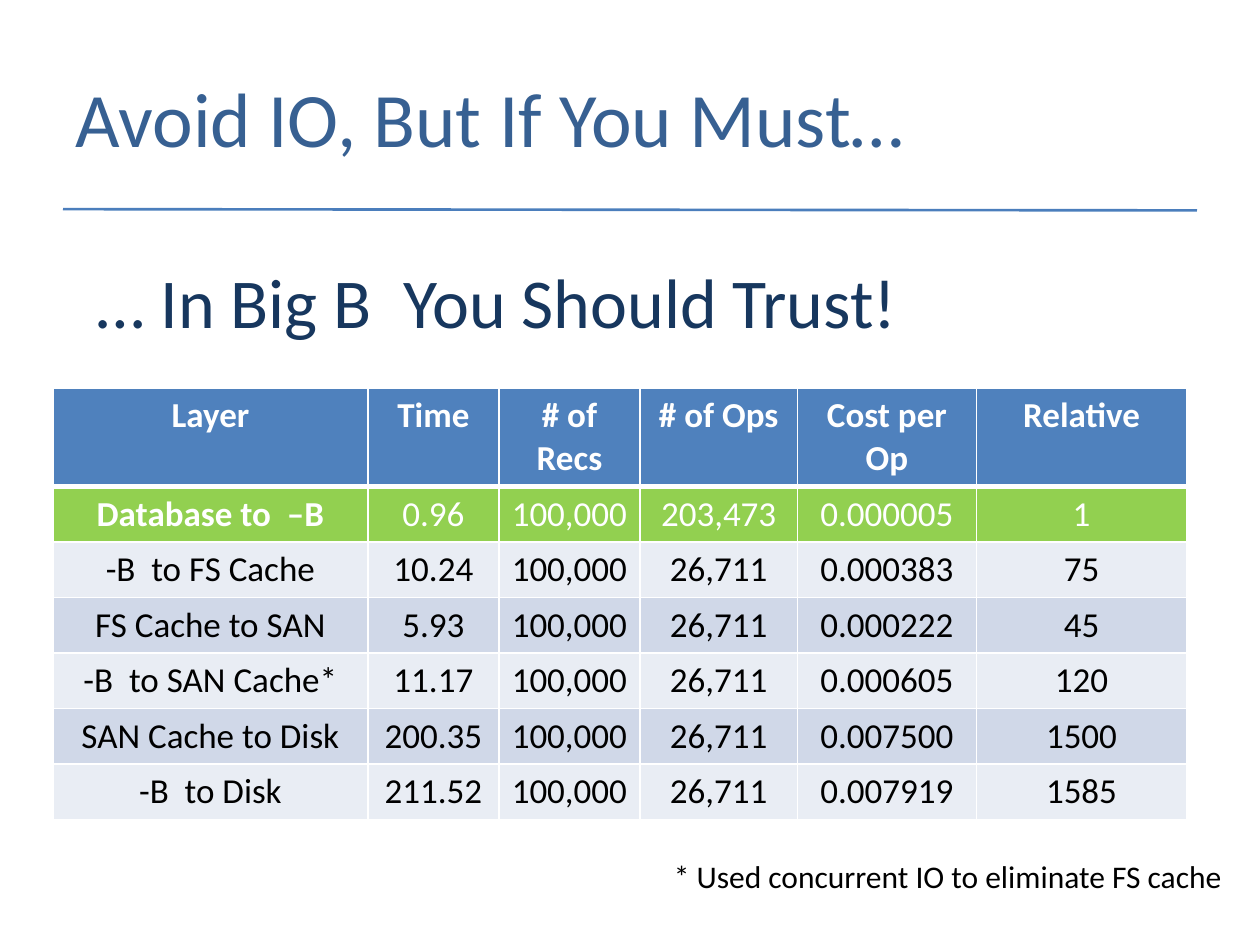
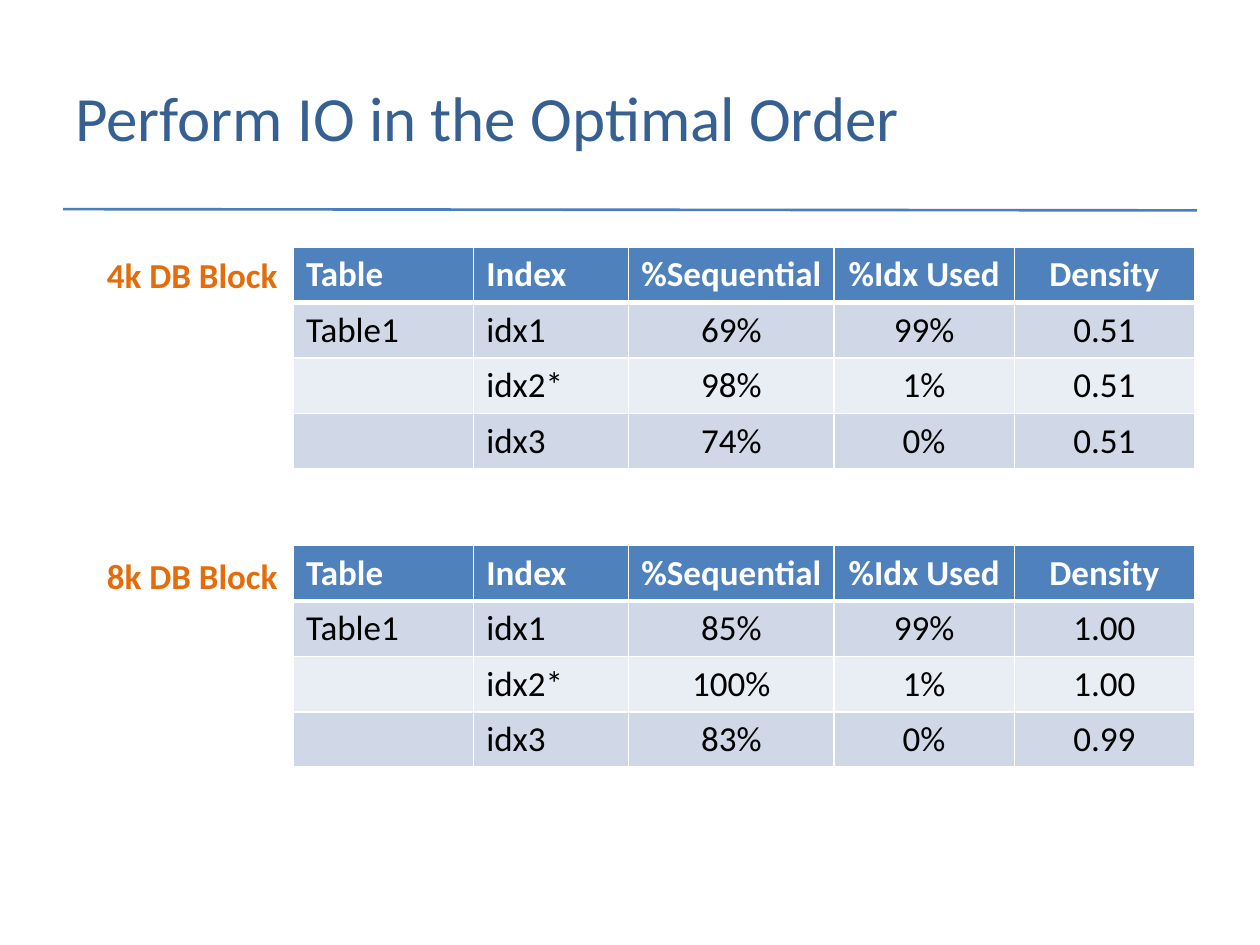
from pptx import Presentation
from pptx.dml.color import RGBColor
from pptx.enum.shapes import MSO_CONNECTOR
from pptx.enum.text import MSO_ANCHOR, MSO_AUTO_SIZE, PP_ALIGN
from pptx.oxml import parse_xml
from pptx.oxml.ns import nsdecls
from pptx.util import Inches, Pt

WHITE = RGBColor(0xFF, 0xFF, 0xFF)
BLACK = RGBColor(0x00, 0x00, 0x00)
TITLE_BLUE = RGBColor(0x37, 0x60, 0x92)
RULE_BLUE = RGBColor(0x4B, 0x7E, 0xBC)
NAVY = RGBColor(0x17, 0x37, 0x5E)
HEADER_BLUE = RGBColor(0x4F, 0x81, 0xBD)
BAND_DARK = RGBColor(0xD0, 0xD8, 0xE8)
BAND_LIGHT = RGBColor(0xE9, 0xED, 0xF4)
GREEN = RGBColor(0x92, 0xD0, 0x50)
ORANGE = RGBColor(0xE4, 0x6C, 0x0A)

FONT = "Calibri"
TABLE_SIZE = 20
LINE_HEIGHT = 0.44
LEFT, CENTER = PP_ALIGN.LEFT, PP_ALIGN.CENTER

LAYER_WIDTHS = [2.5, 1.04, 1.12, 1.25, 1.42, 1.67]
LAYER_ROWS = [
    ["Layer", "Time", "# of Recs", "# of Ops", "Cost per Op", "Relative"],
    ["Database to  –B", "0.96", "100,000", "203,473", "0.000005", "1"],
    ["-B  to FS Cache", "10.24", "100,000", "26,711", "0.000383", "75"],
    ["FS Cache to SAN", "5.93", "100,000", "26,711", "0.000222", "45"],
    ["-B  to SAN Cache*", "11.17", "100,000", "26,711", "0.000605", "120"],
    ["SAN Cache to Disk", "200.35", "100,000", "26,711", "0.007500", "1500"],
    ["-B  to Disk", "211.52", "100,000", "26,711", "0.007919", "1585"],
]

INDEX_WIDTHS = [1.43, 1.23, 1.63, 1.43, 1.43]
INDEX_HEADER = ["Table", "Index", "%Sequential", "%Idx Used", "Density"]
INDEX_ALIGNS = [LEFT, LEFT, CENTER, CENTER, CENTER]
BLOCK_SIZES = [
    ("4k DB Block", 1.96, 1.96, [
        ["Table1", "idx1", "69%", "99%", "0.51"],
        ["", "idx2*", "98%", "1%", "0.51"],
        ["", "idx3", "74%", "0%", "0.51"],
    ]),
    ("8k DB Block", 4.35, 4.33, [
        ["Table1", "idx1", "85%", "99%", "1.00"],
        ["", "idx2*", "100%", "1%", "1.00"],
        ["", "idx3", "83%", "0%", "0.99"],
    ]),
]


class SlideBuilder:
    def __init__(self):
        self.deck = Presentation()
        self.deck.slide_width = Inches(10)
        self.deck.slide_height = Inches(7.5)
        self.page = None

    def new_page(self, title, size):
        """Add a page with its title and the rule below it."""
        self.page = self.deck.slides.add_slide(self.deck.slide_layouts[6])
        self.rule((0.5, 1.66), (9.5, 1.67))
        frame = self.text(title, (0.5, 0.3, 7.83, 1.25), size, TITLE_BLUE)
        for name, value in {"auto_size": MSO_AUTO_SIZE.NONE, "word_wrap": True,
                            "vertical_anchor": MSO_ANCHOR.MIDDLE}.items():
            setattr(frame, name, value)

    def rule(self, start, end):
        points = [Inches(value) for value in start + end]
        line = self.page.shapes.add_connector(MSO_CONNECTOR.STRAIGHT, *points)
        line.line.color.rgb = RULE_BLUE
        line.line.width = Pt(1.5)
        line._element.spPr.append(parse_xml(f"<a:effectLst {nsdecls('a')}/>"))

    def text(self, words, place, size, color, bold=False):
        """Add one unwrapped line of text and return its frame."""
        box = self.page.shapes.add_textbox(*map(Inches, place))
        frame = box.text_frame
        frame.word_wrap = False
        frame.auto_size = MSO_AUTO_SIZE.SHAPE_TO_FIT_TEXT
        self.add_span(frame.paragraphs[0], words, size, color, bold)
        return frame

    def add_span(self, para, words, size, color, bold):
        span = para.add_run()
        span.text = words
        for name, value in {"name": FONT, "size": Pt(size), "bold": bold}.items():
            setattr(span.font, name, value)
        span.font.color.rgb = color

    def table(self, rows, widths, left, top, aligns, header_height=LINE_HEIGHT,
              highlight=None):
        """Add a banded table; the highlight row is green with a bold first cell."""
        height = header_height + LINE_HEIGHT * (len(rows) - 1)
        frame = self.page.shapes.add_table(
            len(rows), len(widths),
            *map(Inches, (left, top, sum(widths), height)))
        grid = frame.table
        for column, width in zip(grid.columns, widths):
            column.width = Inches(width)
        for r, values in enumerate(rows):
            grid.rows[r].height = Inches(LINE_HEIGHT if r else header_height)
            if r == 0:
                fill, color = HEADER_BLUE, WHITE
            elif r == highlight:
                fill, color = GREEN, WHITE
            else:
                fill, color = (BAND_DARK if r % 2 else BAND_LIGHT), BLACK
            for c, (words, align) in enumerate(zip(values, aligns)):
                cell = grid.cell(r, c)
                self.borders(cell, top=3 if r == 1 else 1, bottom=1 if r else 3)
                cell.fill.solid()
                cell.fill.fore_color.rgb = fill
                para = cell.text_frame.paragraphs[0]
                para.alignment = align
                if words:
                    bold = r == 0 or (r == highlight and c == 0)
                    self.add_span(para, words, TABLE_SIZE, color, bold)

    def borders(self, cell, top, bottom):
        properties = cell._tc.get_or_add_tcPr()
        for side, width in {"L": 1, "R": 1, "T": top, "B": bottom}.items():
            properties.append(parse_xml(
                f'<a:ln{side} {nsdecls("a")} w="{int(Pt(width))}"><a:solidFill>'
                f'<a:srgbClr val="{WHITE}"/></a:solidFill></a:ln{side}>'))


def build_layer_costs(builder):
    builder.new_page("Avoid IO, But If You Must…", 44)
    builder.table(LAYER_ROWS, LAYER_WIDTHS, 0.42, 3.08,
                  [CENTER] * len(LAYER_WIDTHS), header_height=0.78, highlight=1)
    builder.text("* Used concurrent IO to eliminate FS cache",
                 (5.25, 6.75, 4.6, 0.4), 18, BLACK)
    builder.text("… In Big B  You Should Trust!", (0.67, 2, 6.61, 0.77), 40, NAVY)


def build_index_order(builder):
    builder.new_page("Perform IO in the Optimal Order", 36)
    for label, label_top, table_top, rows in BLOCK_SIZES:
        builder.table([INDEX_HEADER] + rows, INDEX_WIDTHS, 2.33, table_top,
                      INDEX_ALIGNS)
        builder.text(label, (0.75, label_top, 1.57, 0.44), 20, ORANGE, bold=True)


def main():
    builder = SlideBuilder()
    build_layer_costs(builder)
    build_index_order(builder)
    builder.deck.save("out.pptx")


if __name__ == "__main__":
    main()
